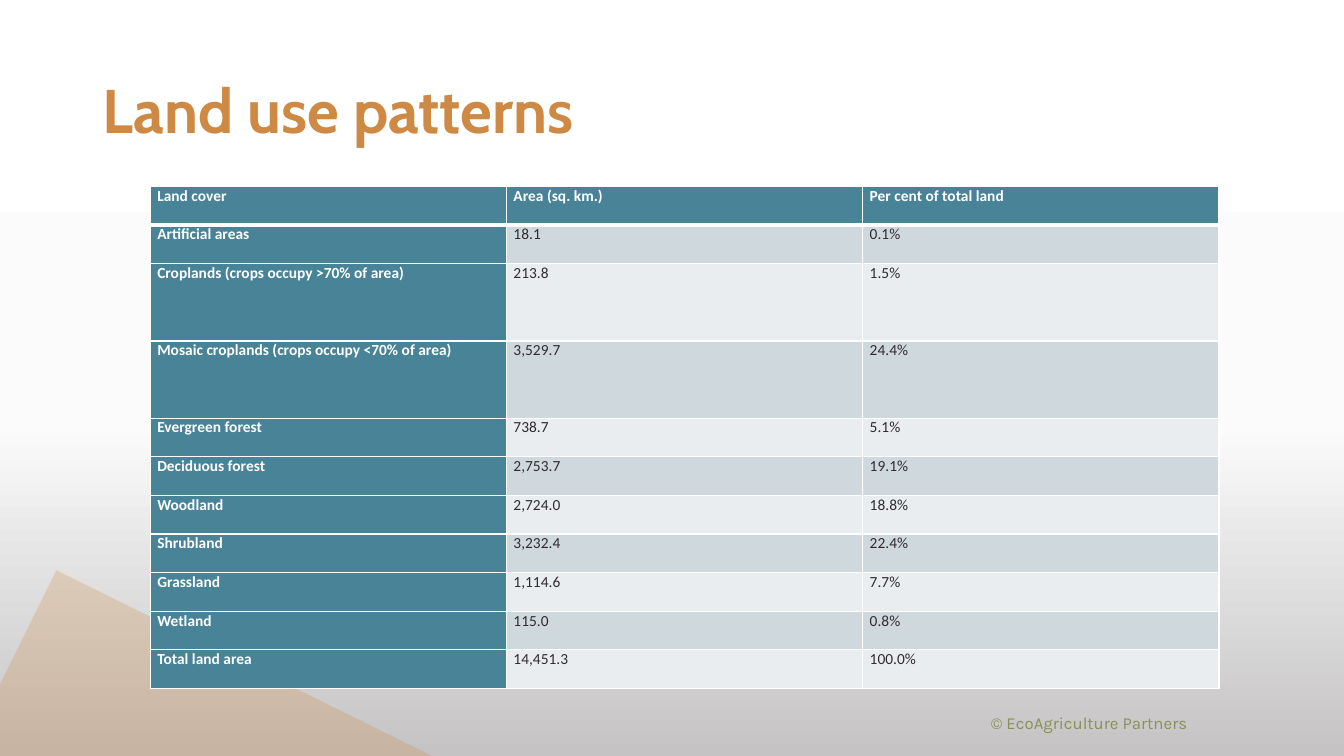
from copy import deepcopy
from dataclasses import dataclass

from lxml.etree import SubElement
from pptx import Presentation
from pptx.dml.color import RGBColor
from pptx.enum.shapes import MSO_SHAPE
from pptx.enum.text import MSO_ANCHOR, PP_ALIGN
from pptx.oxml.ns import qn
from pptx.util import Inches, Pt

TEAL, ORANGE, OLIVE = "488397", "CE8944", "889158"
WHITE, INK = "FFFFFF", "302B2F"
BANDS = ("CFD9DD", "E9EDEF")
HEADERS = ("Land cover", "Area (sq. km.)", "Per cent of total land")
TABLE_WIDTH, ROW_UNIT = 10.6, 4.98 / 13


@dataclass
class LandCover:
    name: str
    area: str
    share: str
    units: int = 1


LAND_COVERS = [
    LandCover("Artificial areas", "18.1", "0.1%"),
    LandCover("Croplands (crops occupy >70% of area)", "213.8", "1.5%", 2),
    LandCover("Mosaic croplands (crops occupy <70% of area)", "3,529.7", "24.4%", 2),
    LandCover("Evergreen forest", "738.7", "5.1%"),
    LandCover("Deciduous forest", "2,753.7", "19.1%"),
    LandCover("Woodland", "2,724.0", "18.8%"),
    LandCover("Shrubland", "3,232.4", "22.4%"),
    LandCover("Grassland", "1,114.6", "7.7%"),
    LandCover("Wetland", "115.0", "0.8%"),
    LandCover("Total land area", "14,451.3", "100.0%"),
]


def rgb(color: str) -> RGBColor:
    return RGBColor.from_string(color)


def write(tf, text: str, font: str, size: float, color: str, bold: bool = False) -> None:
    tf.text = text
    p = tf.paragraphs[0]
    p.alignment = PP_ALIGN.LEFT
    f = p.runs[0].font
    f.name, f.size, f.bold = font, Pt(size), bold
    f.color.rgb = rgb(color)


def set_background(s) -> None:
    fill = s.background.fill
    fill.gradient()
    fill.gradient_angle = 270
    stops = s.element.find(".//" + qn("a:gsLst"))
    stops.append(deepcopy(stops[-1]))
    colors = ((0, WHITE), (0.56, "FBFBFB"), (1, "C5C3C3"))
    for stop, (position, color) in zip(fill.gradient_stops, colors):
        stop.position = position
        stop.color.rgb = rgb(color)


def add_hill(s) -> None:
    sp = s.shapes.add_shape(MSO_SHAPE.RECTANGLE, Inches(-0.22), Inches(6.45),
                            Inches(4.17), Inches(2.54))
    sp.rotation = 26.3
    sp.shadow.inherit = False
    sp.line.fill.background()
    sp.fill.solid()
    sp.fill.fore_color.rgb = rgb(ORANGE)
    color = sp.element.spPr.find(qn("a:solidFill"))[0]
    SubElement(color, qn("a:alpha"), val="25000")


def add_credit(s) -> None:
    sp = s.shapes.add_textbox(Inches(9.73), Inches(7.02), Inches(2.69), Inches(0.3))
    sp.text_frame.word_wrap = True
    write(sp.text_frame, "© EcoAgriculture Partners", "Karla", 12, OLIVE)


def set_title(s) -> None:
    sp = s.shapes.title
    sp.left, sp.top, sp.width, sp.height = map(Inches, (0.92, 0.4, 11.5, 1.45))
    tf = sp.text_frame
    tf.vertical_anchor = MSO_ANCHOR.MIDDLE
    write(tf, "Land use patterns", "Cabin", 44, ORANGE, True)
    tf.paragraphs[0].line_spacing = 0.9


def set_borders(cell, top: float, bottom: float) -> None:
    tc_pr = cell._tc.get_or_add_tcPr()
    for side, width in (("L", 1), ("R", 1), ("T", top), ("B", bottom)):
        ln = SubElement(tc_pr, qn(f"a:ln{side}"), w=str(Pt(width)))
        SubElement(SubElement(ln, qn("a:solidFill")), qn("a:srgbClr"), val=WHITE)


def add_land_table(s) -> None:
    rows = [HEADERS] + [(c.name, c.area, c.share) for c in LAND_COVERS]
    units = [1] + [c.units for c in LAND_COVERS]
    table = s.shapes.add_table(len(rows), len(HEADERS), Inches(1.49), Inches(1.85),
                               Inches(TABLE_WIDTH), Inches(ROW_UNIT * sum(units))).table
    table.first_col = True
    for column in table.columns:
        column.width = Inches(TABLE_WIDTH / len(HEADERS))
    for i, (texts, unit) in enumerate(zip(rows, units)):
        table.rows[i].height = Inches(ROW_UNIT * unit)
        for j, text in enumerate(texts):
            cell = table.cell(i, j)
            heading = i == 0 or j == 0
            cell.margin_left = cell.margin_right = Inches(0.07)
            cell.margin_top = cell.margin_bottom = 0
            set_borders(cell, 3 if i == 1 else 1, 3 if i == 0 else 1)
            cell.fill.solid()
            cell.fill.fore_color.rgb = rgb(TEAL if heading else BANDS[(i - 1) % 2])
            write(cell.text_frame, text, "Calibri", 11, WHITE if heading else INK, heading)


def main() -> None:
    prs = Presentation()
    prs.slide_width, prs.slide_height = Inches(13.33), Inches(7.5)
    s = prs.slides.add_slide(prs.slide_layouts[5])
    set_background(s)
    add_hill(s)
    add_credit(s)
    set_title(s)
    add_land_table(s)
    prs.save("out.pptx")


if __name__ == "__main__":
    main()
